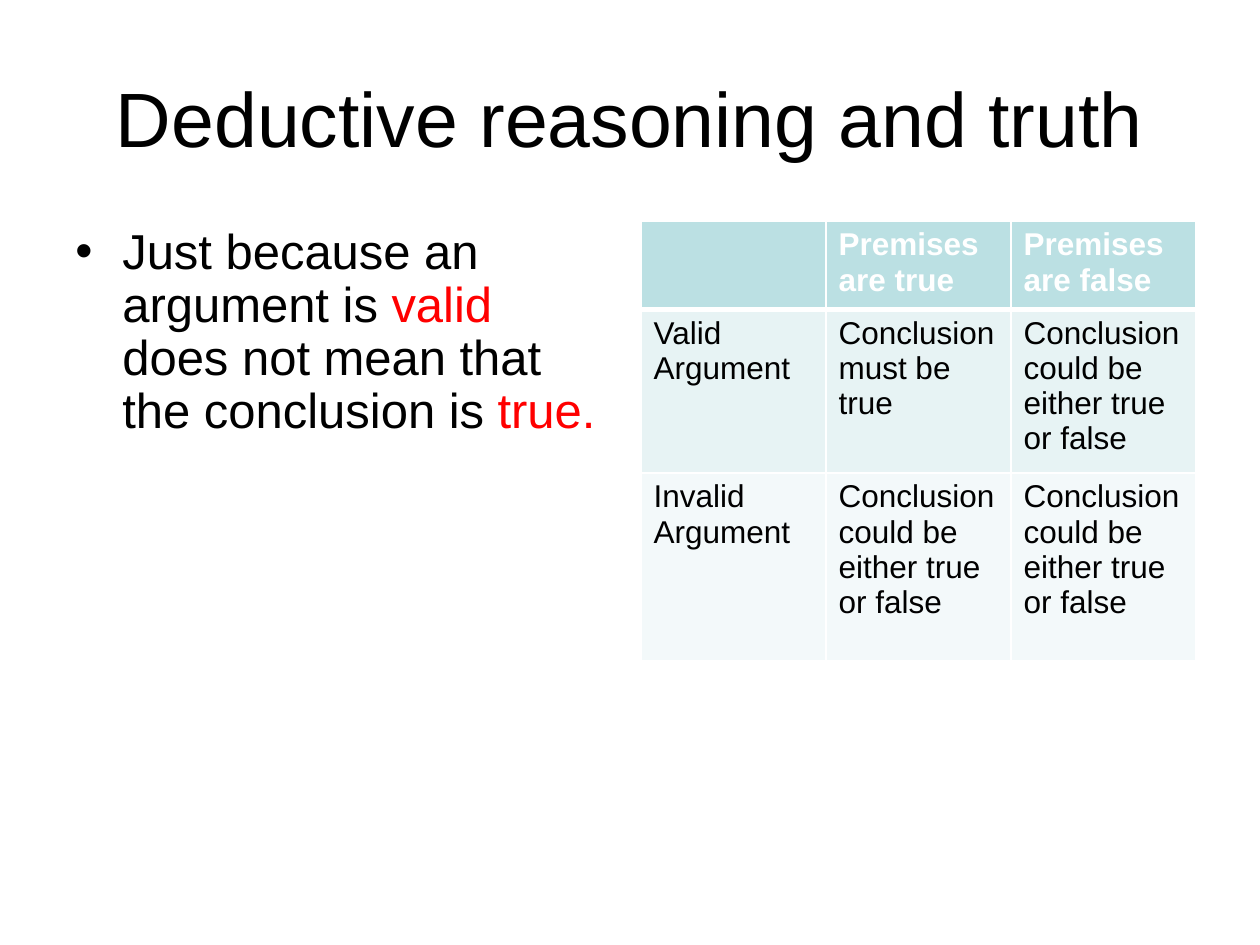
from typing import NamedTuple

from lxml.etree import SubElement
from pptx import Presentation
from pptx.dml.color import RGBColor
from pptx.enum.text import MSO_ANCHOR, PP_ALIGN
from pptx.oxml.ns import qn
from pptx.util import Emu, Pt

SCALE = 914400 / 126
FONT = "Arial"
HUES = {
    "black": "000000",
    "white": "FFFFFF",
    "red": "FF0000",
    "head": "BBE0E3",
    "odd": "E7F3F4",
    "even": "F3F9FA",
}


class Run(NamedTuple):
    text: str
    hue: str = "black"


class Box(NamedTuple):
    left: int
    top: int
    width: int
    height: int


class Row(NamedTuple):
    height: int
    fill: str
    hue: str
    bold: bool
    top: int
    base: int
    texts: tuple[str, ...]


EITHER = "Conclusion could be either true or false"
TITLE = Box(63, 38, 1134, 157)
BODY = Box(63, 221, 557, 624)
GRID = Box(641, 221, 555, 425)
POINT = (
    Run("Just because an argument is "),
    Run("valid", "red"),
    Run(" does not mean that the conclusion is "),
    Run("true.", "red"),
)
# top and base are the border widths in points
ROWS = (
    Row(83, "head", "white", True, 1, 3,
        ("", "Premises are true", "Premises are false")),
    Row(154, "odd", "black", False, 3, 1,
        ("Valid Argument", "Conclusion must be true", EITHER)),
    Row(188, "even", "black", False, 1, 1,
        ("Invalid Argument", EITHER, EITHER)),
)


def px(count: int) -> Emu:
    return Emu(round(count * SCALE))


def color(name: str) -> RGBColor:
    return RGBColor.from_string(HUES[name])


def add_runs(para, runs: tuple[Run, ...], size: int, bold: bool = False) -> None:
    for item in runs:
        run = para.add_run()
        run.text = item.text
        font = run.font
        font.name, font.size, font.bold = FONT, Pt(size), bold
        font.color.rgb = color(item.hue)


def add_box(slide, box: Box):
    frame = slide.shapes.add_textbox(*map(px, box)).text_frame
    frame.word_wrap = True
    return frame


def add_bullet(para, indent: int) -> None:
    """Hang the paragraph behind a round bullet."""
    props = para._p.get_or_add_pPr()
    props.set("marL", str(px(indent)))
    props.set("indent", str(-px(indent)))
    SubElement(props, qn("a:buFont"), typeface=FONT)
    SubElement(props, qn("a:buChar"), char="•")


def add_edges(cell, top: int, base: int) -> None:
    """Draw the white borders of a cell; they must come before its fill."""
    props = cell._tc.get_or_add_tcPr()
    for side, width in (("L", 1), ("R", 1), ("T", top), ("B", base)):
        line = SubElement(props, qn(f"a:ln{side}"), w=str(Pt(width)))
        fill = SubElement(line, qn("a:solidFill"))
        SubElement(fill, qn("a:srgbClr"), val=HUES["white"])


def add_grid(slide, box: Box, rows: tuple[Row, ...]) -> None:
    count = len(rows[0].texts)
    table = slide.shapes.add_table(len(rows), count, *map(px, box)).table
    for col in table.columns:
        col.width = px(box.width // count)
    for line, row in zip(table.rows, rows):
        line.height = px(row.height)
        for cell, text in zip(line.cells, row.texts):
            add_edges(cell, row.top, row.base)
            cell.fill.solid()
            cell.fill.fore_color.rgb = color(row.fill)
            if text:
                para = cell.text_frame.paragraphs[0]
                add_runs(para, (Run(text, row.hue),), 18, row.bold)


def main() -> None:
    deck = Presentation()
    deck.slide_width, deck.slide_height = px(1260), px(945)
    slide = deck.slides.add_slide(deck.slide_layouts[6])

    frame = add_box(slide, TITLE)
    frame.vertical_anchor = MSO_ANCHOR.MIDDLE
    para = frame.paragraphs[0]
    para.alignment = PP_ALIGN.CENTER
    add_runs(para, (Run("Deductive reasoning and truth"),), 44)

    para = add_box(slide, BODY).paragraphs[0]
    para.line_spacing = 0.9
    para.space_before = Pt(5.6)
    add_bullet(para, 47)
    add_runs(para, POINT, 28)

    add_grid(slide, GRID, ROWS)
    deck.save("out.pptx")


if __name__ == "__main__":
    main()
